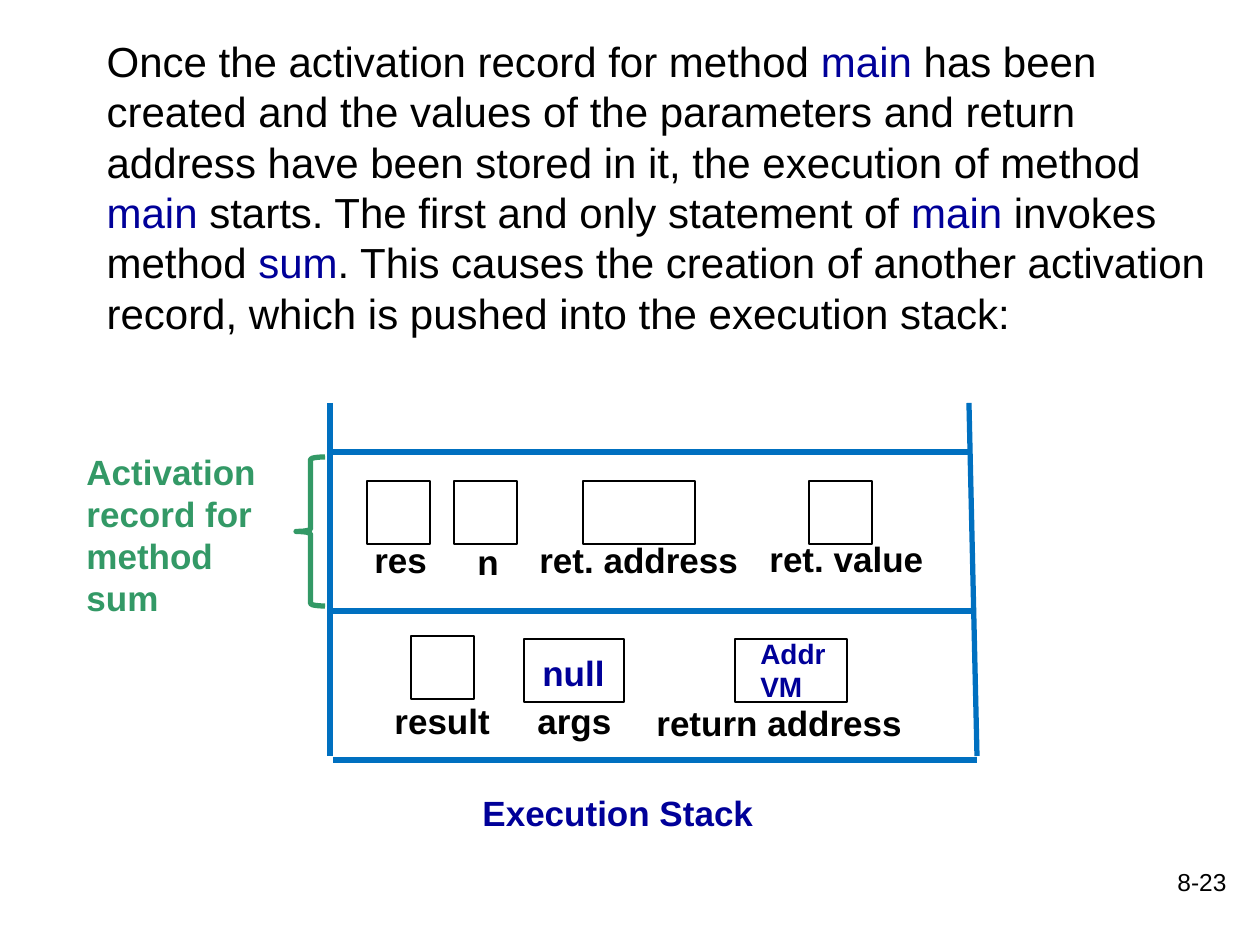
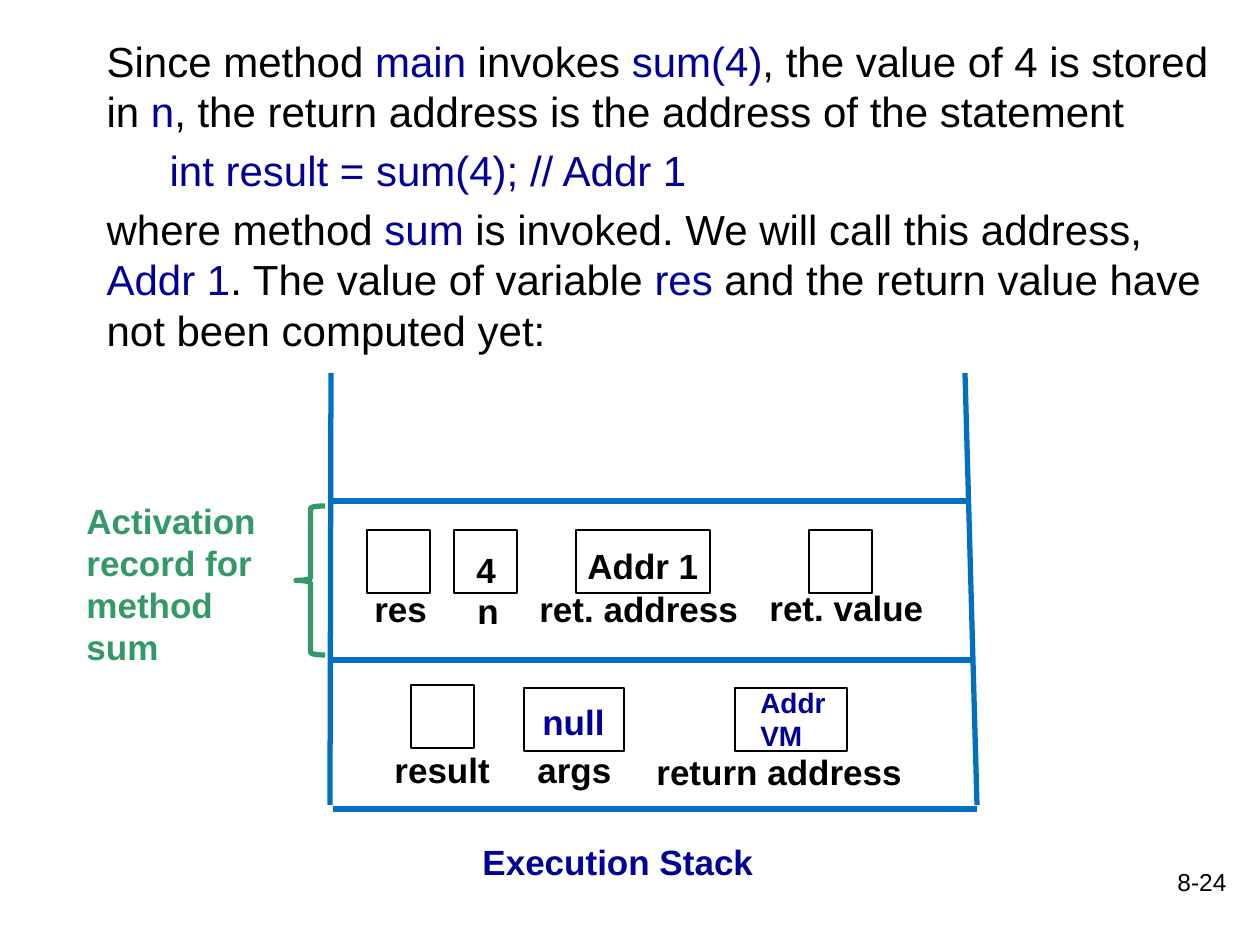
from lxml import etree
from pptx import Presentation
from pptx import util as u
from pptx.dml.color import RGBColor
from pptx.enum import shapes, text
from pptx.oxml.ns import qn

PX = 914400 / 126  # EMU in one px
FONT = "Arial"
BLACK, NAVY, BLUE, GREEN = "000000", "000099", "0070C0", "339966"
LABEL_H, BOX = 55, 63
LEFT_WALL, RIGHT_WALL = 330, 977


def px(*lengths):
    return [u.Emu(round(length * PX)) for length in lengths]


def rgb(value):
    return RGBColor.from_string(value)


def style_font(font, size, color, bold=False):
    font.name, font.size, font.bold = FONT, u.Pt(size), bold
    font.color.rgb = rgb(color)


def add_label(slide, words, x, y, w, h=LABEL_H, color=BLACK, size=20,
              bold=True, wrap=False, align=text.PP_ALIGN.LEFT):
    frame = slide.shapes.add_textbox(*px(x, y, w, h)).text_frame
    frame.word_wrap = wrap
    frame.text = words
    for paragraph in frame.paragraphs:
        paragraph.alignment = align
        style_font(paragraph.font, size, color, bold)


def add_outline(slide, kind, x, y, w, h, color=BLACK, weight=0.75):
    outline = slide.shapes.add_shape(kind, *px(x, y, w, h))
    outline.shadow.inherit = False
    outline.fill.background()
    outline.line.color.rgb = rgb(color)
    outline.line.width = u.Pt(weight)


def add_cell(slide, x, y, w=BOX):
    add_outline(slide, shapes.MSO_SHAPE.RECTANGLE, x, y, w, BOX)


def add_edge(slide, x1, y1, x2, y2):
    edge = slide.shapes.add_connector(
        shapes.MSO_CONNECTOR.STRAIGHT, *px(x1, y1, x2, y2))
    edge.line.color.rgb = rgb(BLUE)
    edge.line.width = u.Pt(3)
    etree.SubElement(edge.element.spPr, qn("a:effectLst"))


def fill_body(slide, paragraphs):
    """Write the explanation; words between asterisks are code terms."""
    body = slide.placeholders[1]
    body.left, body.top, body.width, body.height = px(94, 29, 1144, 374)
    frame = body.text_frame
    frame.auto_size = text.MSO_AUTO_SIZE.NONE
    for i, words in enumerate(paragraphs):
        paragraph = frame.paragraphs[0] if i == 0 else frame.add_paragraph()
        properties = paragraph._p.get_or_add_pPr()
        properties.set("marL", "0")
        properties.set("indent", "0")
        etree.SubElement(properties, qn("a:buNone"))
        paragraph.space_before = u.Pt(4.8 if i else 0)
        style_font(paragraph.font, 24, BLACK)
        for j, part in enumerate(words.split("*")):
            if part:
                run = paragraph.add_run()
                run.text = part
                style_font(run.font, 24, NAVY if j % 2 else BLACK)


def add_stack(slide, floor, top, left_top, right_top):
    """Walls, floor and the two lines that bound the record of sum."""
    add_edge(slide, left_top, top, LEFT_WALL, floor - 4)
    add_edge(slide, RIGHT_WALL, floor - 4, right_top, top)
    add_edge(slide, 333, floor, RIGHT_WALL, floor)
    for above_floor in (149, 308):
        add_edge(slide, 333, floor - above_floor, 971, floor - above_floor)
    add_label(slide, "Execution Stack", 470, floor + 25, 299, color=NAVY)


def add_main_record(slide, floor):
    add_cell(slide, 411, floor - 124)
    add_cell(slide, 524, floor - 121, 100)
    add_cell(slide, 735, floor - 121, 112)
    add_label(slide, "result", 382, floor - 67, 121)
    add_label(slide, "args", 525, floor - 67, 100)
    add_label(slide, "return address", 644, floor - 65, 294, wrap=True)
    add_label(slide, "null", 530, floor - 115, 88, color=NAVY)
    add_label(slide, "Addr\nVM", 748, floor - 130, 91, 81, NAVY, 16)


def add_sum_record(slide, floor, address_x, address_w):
    cells_y = floor - 279
    for x, w in ((367, BOX), (454, BOX), (address_x, address_w), (809, BOX)):
        add_cell(slide, x, cells_y, w)
    for name, x, y, w in (("res", 362, 228, 78), ("n", 465, 226, 47),
                          ("ret. address", 527, 228, 226),
                          ("ret. value", 757, 229, 180)):
        add_label(slide, name, x, floor - y, w)
    add_outline(slide, shapes.MSO_SHAPE.LEFT_BRACE,
                296, floor - 303, 29, 149, GREEN, 3)
    add_label(slide, "Activation\nrecord for\nmethod\nsum",
              74, floor - 316, 205, 183, GREEN)


def add_page(deck, number, paragraphs, floor, walls, address_cell):
    slide = deck.slides.add_slide(deck.slide_layouts[1])
    title = slide.shapes.title.element
    title.getparent().remove(title)
    fill_body(slide, paragraphs)
    add_stack(slide, floor, *walls)
    add_main_record(slide, floor)
    add_sum_record(slide, floor, *address_cell)
    add_label(slide, number, 977, 861, 262, 63, size=14, bold=False,
              wrap=True, align=text.PP_ALIGN.RIGHT)
    return slide


def main():
    deck = Presentation()
    deck.slide_width, deck.slide_height = px(1260, 945)

    # The record of sum is pushed, still empty
    add_page(deck, "8-23", [
        "Once the activation record for method *main* has been created and "
        "the values of the parameters and return address have been stored in "
        "it, the execution of method *main* starts. The first and only "
        "statement of *main* invokes method *sum*. This causes the creation "
        "of another activation record, which is pushed into the execution "
        "stack:",
    ], floor=760, walls=(403, 330, 969), address_cell=(583, 112))

    # Parameter and return address are stored
    floor = 809
    stored = add_page(deck, "8-24", [
        "Since method *main* invokes *sum(4)*, the value of 4 is stored in "
        "*n*, the return address is the address of the statement",
        "*\tint result = sum(4); // Addr 1*",
        "where method *sum* is invoked. We will call this address, *Addr 1*. "
        "The value of variable *res* and the return value have not been "
        "computed yet:",
    ], floor, walls=(373, 331, 965), address_cell=(576, 134))
    add_label(stored, "Addr 1", 575, floor - 271, 137)
    add_label(stored, "4", 464, floor - 267, 45)

    deck.save("out.pptx")


if __name__ == "__main__":
    main()
